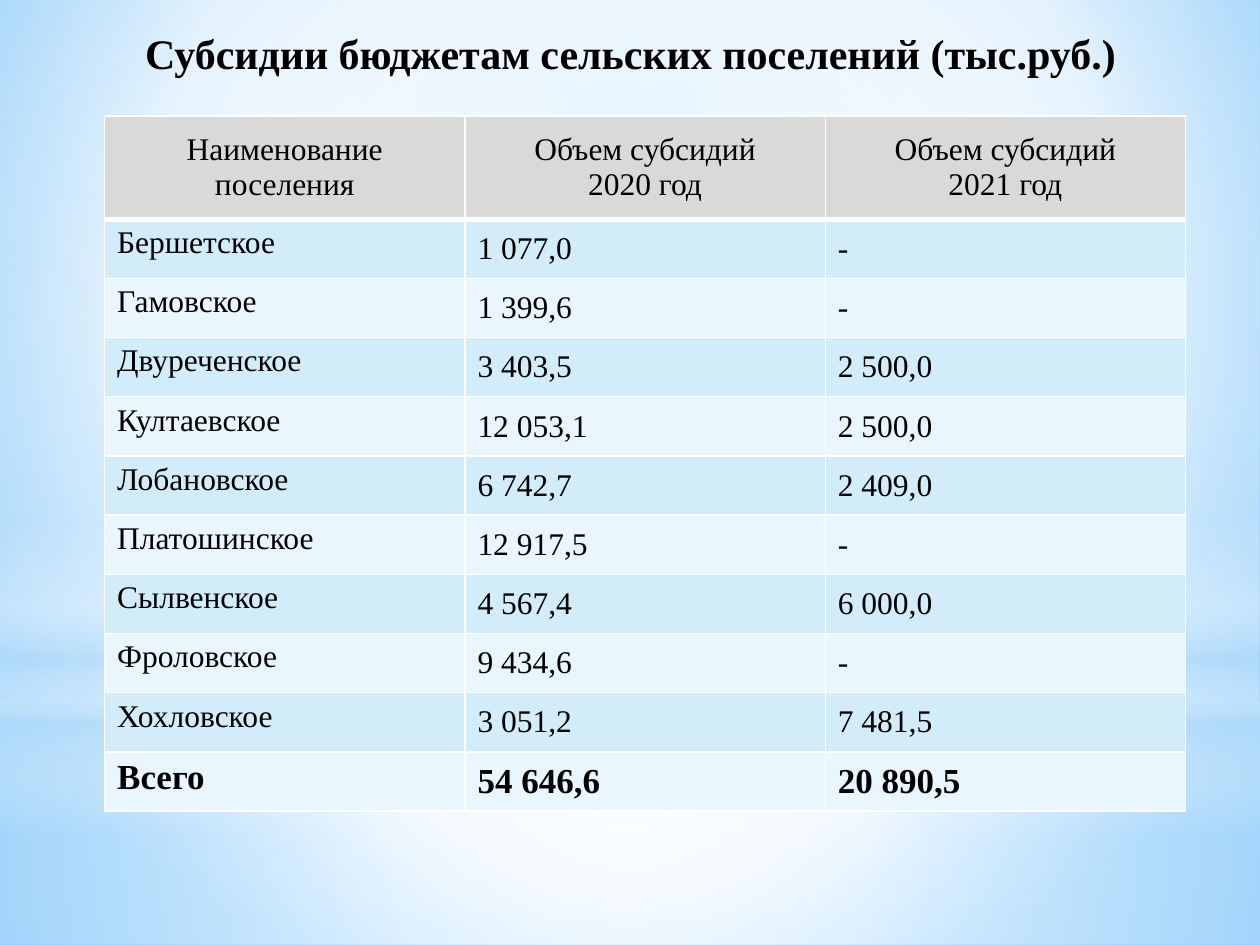
from lxml import etree
from pptx import Presentation
from pptx.dml.color import RGBColor
from pptx.enum.shapes import MSO_SHAPE as SHAPE
from pptx.enum.text import MSO_ANCHOR as ANCHOR, PP_ALIGN as ALIGN
from pptx.oxml import parse_xml
from pptx.oxml.ns import qn
from pptx.util import Inches, Pt

TITLE = "Субсидии бюджетам сельских поселений (тыс.руб.)"
HEADER = ("Наименование поселения", "Объем субсидий\n2020 год", "Объем субсидий\n2021 год")
SETTLEMENTS = [
    ("Бершетское", "1 077,0", "-"),
    ("Гамовское", "1 399,6", "-"),
    ("Двуреченское", "3 403,5", "2 500,0"),
    ("Култаевское", "12 053,1", "2 500,0"),
    ("Лобановское", "6 742,7", "2 409,0"),
    ("Платошинское", "12 917,5", "-"),
    ("Сылвенское", "4 567,4", "6 000,0"),
    ("Фроловское", "9 434,6", "-"),
    ("Хохловское", "3 051,2", "7 481,5"),
]
TOTAL = ("Всего", "54 646,6", "20 890,5")
ROWS = [HEADER, *SETTLEMENTS, TOTAL]

HEADER_FILL, BAND_FILLS = "D9D9D9", ("EAF6FD", "D2ECFA")
HEADER_HEIGHT, ROW_HEIGHT, COLUMN_WIDTH = 0.82, 0.47, 2.86
BODY_FONT = {"name": "Times New Roman", "size": Pt(18), "bold": False}
TOTAL_FONT = {**BODY_FONT, "size": Pt(20), "bold": True}
TITLE_FONT = {**BODY_FONT, "size": Pt(24), "bold": True}

# Stops are (position %, colour, opacity %); focus is left, top, right, bottom in %
CENTRE = (50, 50, 50, 50)
BACKGROUND = ([(0, "9ED5FF", 100), (60, "FFFFFF", 100), (100, "5BB9FF", 100)], (20, 10, 20, 60))
GLOWS = [
    (SHAPE.RECTANGLE, (0, 5.58, 10, 1.92),
     [(0, "FFFFFF", 91), (37, "FFFFFF", 76), (100, "B4DCFA", 79)], CENTRE),
    (SHAPE.RECTANGLE, (0, 0, 10, 5.58),
     [(0, "FFFFFF", 89), (48, "FFFFFF", 62), (100, "B4DCFA", 79)], CENTRE),
    (SHAPE.RECTANGLE, (0, 4.12, 10, 2.5),
     [(0, "FFFFFF", 0), (29, "FFFFFF", 30), (45, "B4DCFA", 40),
      (55, "FFFFFF", 26), (65, "B4DCFA", 60), (100, "FFFFFF", 0)], None),
    (SHAPE.OVAL, (0, 1.75, 10, 5.58), [(0, "FFFFFF", 100), (56, "FFFFFF", 0)], CENTRE),
]


def color(value):
    return RGBColor.from_string(value)


def set_gradient(fill, parent, stops, focus):
    """Circular gradient around focus, or a vertical one when focus is None."""
    fill.solid()
    stop_xml = "".join(
        f'<a:gs pos="{position * 1000}"><a:srgbClr val="{value}">'
        f'<a:alpha val="{opacity * 1000}"/></a:srgbClr></a:gs>'
        for position, value, opacity in stops)
    if focus:
        sides = " ".join(f'{side}="{inset * 1000}"' for side, inset in zip("ltrb", focus))
        course = f'<a:path path="circle"><a:fillToRect {sides}/></a:path>'
    else:
        course = '<a:lin ang="5400000" scaled="0"/>'
    gradient = parse_xml(
        '<a:gradFill xmlns:a="http://schemas.openxmlformats.org/drawingml/2006/main" '
        f'rotWithShape="1"><a:gsLst>{stop_xml}</a:gsLst>{course}</a:gradFill>')
    solid = next(parent.iter(qn("a:solidFill")))
    solid.getparent().replace(solid, gradient)


def write(frame, text, font, align):
    frame.text = text
    for para in frame.paragraphs:
        para.alignment = align
        for span in para.runs:
            span.font.color.rgb = color("000000")
            for name, value in font.items():
                setattr(span.font, name, value)


def set_borders(cell, bottom_width):
    properties = cell._tc.get_or_add_tcPr()
    widths = {"lnL": 1, "lnR": 1, "lnT": 1, "lnB": bottom_width}
    for index, (tag, width) in enumerate(widths.items()):
        line = etree.Element(qn(f"a:{tag}"), w=str(Pt(width)))
        solid = etree.SubElement(line, qn("a:solidFill"))
        etree.SubElement(solid, qn("a:srgbClr"), val="FFFFFF")
        properties.insert(index, line)


def add_backdrop(page):
    set_gradient(page.background.fill, page.element, *BACKGROUND)
    for kind, place, stops, focus in GLOWS:
        glow = page.shapes.add_shape(kind, *map(Inches, place))
        glow.shadow.inherit = False
        glow.line.fill.background()
        set_gradient(glow.fill, glow.element.spPr, stops, focus)


def add_title(page):
    box = page.shapes.add_textbox(*map(Inches, (0.2, 0.13, 9.61, 0.63)))
    frame = box.text_frame
    frame.word_wrap = True
    frame.margin_top = Inches(0.09)
    write(frame, TITLE, TITLE_FONT, ALIGN.CENTER)


def add_subsidy_table(page):
    columns = len(HEADER)
    height = HEADER_HEIGHT + ROW_HEIGHT * (len(ROWS) - 1)
    place = map(Inches, (0.83, 0.92, COLUMN_WIDTH * columns, height))
    table = page.shapes.add_table(len(ROWS), columns, *place).table
    for column in table.columns:
        column.width = Inches(COLUMN_WIDTH)
    for index, texts in enumerate(ROWS):
        is_header = index == 0
        table.rows[index].height = Inches(HEADER_HEIGHT if is_header else ROW_HEIGHT)
        font = TOTAL_FONT if texts is TOTAL else BODY_FONT
        for number, text in enumerate(texts):
            cell = table.cell(index, number)
            cell.fill.solid()
            cell.fill.fore_color.rgb = color(HEADER_FILL if is_header else BAND_FILLS[index % 2])
            cell.vertical_anchor = ANCHOR.MIDDLE if is_header or number else ANCHOR.TOP
            write(cell.text_frame, text, font, ALIGN.CENTER if is_header else ALIGN.LEFT)
            set_borders(cell, 3 if is_header else 1)


def main():
    deck = Presentation()
    deck.slide_width, deck.slide_height = Inches(10), Inches(7.5)
    page = deck.slides.add_slide(deck.slide_layouts[6])
    add_backdrop(page)
    add_title(page)
    add_subsidy_table(page)
    deck.save("out.pptx")


if __name__ == "__main__":
    main()
